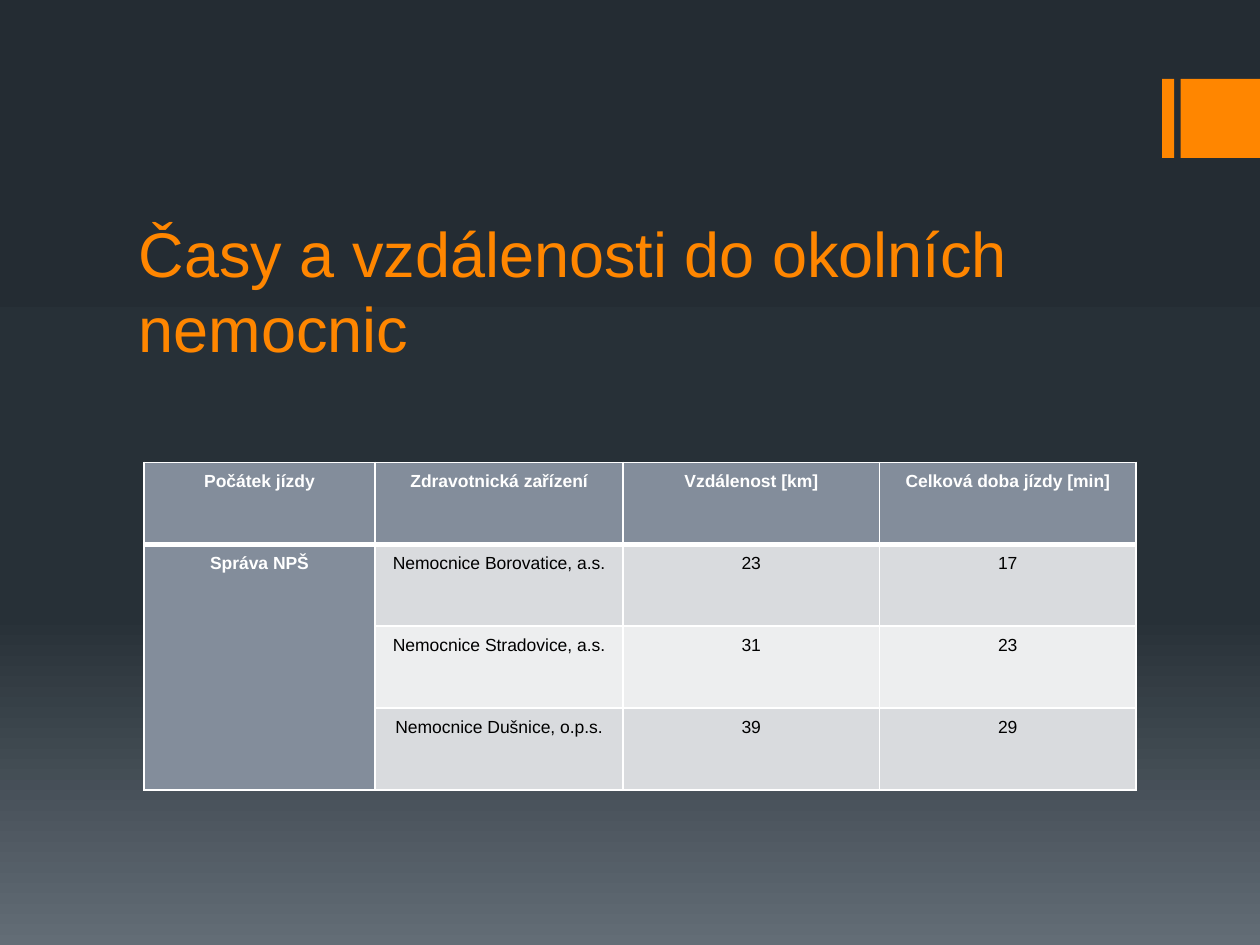
from copy import deepcopy
from dataclasses import dataclass

from lxml import etree
from pptx import Presentation
from pptx.dml.color import RGBColor
from pptx.enum.shapes import MSO_SHAPE
from pptx.enum.text import MSO_ANCHOR, MSO_AUTO_SIZE, PP_ALIGN
from pptx.oxml.ns import qn
from pptx.util import Pt

RECT = MSO_SHAPE.RECTANGLE
BOTTOM = MSO_ANCHOR.BOTTOM
FIXED = MSO_AUTO_SIZE.NONE
LEFT, CENTER = PP_ALIGN.LEFT, PP_ALIGN.CENTER


@dataclass(frozen=True)
class Theme:
    font: str = "Arial"
    title_size: float = 36
    cell_size: float = 10
    accent: str = "FF8600"
    head: str = "838D9B"
    bands: tuple = ("D9DBDE", "EDEEEF")
    light: str = "FFFFFF"
    dark: str = "000000"
    back: tuple = ((0, "242C33"), (0.65, "273037"), (1, "636D76"))


@dataclass(frozen=True)
class Box:
    left: float
    top: float
    width: float
    height: float

    def lengths(self) -> list:
        return [Pt(n) for n in (self.left, self.top, self.width, self.height)]


THEME = Theme()
MARKS = (Box(664.1, 45.1, 6.9, 45.1), Box(674.7, 45.1, 45.3, 45.1))
TITLE = Box(72, 121.7, 576, 90.7)
GRID = Box(82.2, 264.2, 567, 187.2)
COLS = (132.1, 141.7, 146.6, 146.6)
ROWS = (
    ("Počátek jízdy", "Zdravotnická zařízení", "Vzdálenost [km]",
     "Celková doba jízdy [min]"),
    ("Správa NPŠ", "Nemocnice Borovatice, a.s.", "23", "17"),
    ("", "Nemocnice Stradovice, a.s.", "31", "23"),
    ("", "Nemocnice Dušnice, o.p.s.", "39", "29"),
)


def color(code: str) -> RGBColor:
    return RGBColor.from_string(code)


def paint_back(slide) -> None:
    fill = slide.background.fill
    fill.gradient()
    fill.gradient_angle = 270
    stops = slide.element.find(".//" + qn("a:gsLst"))
    stops.insert(1, deepcopy(stops[0]))
    for stop, (place, code) in zip(fill.gradient_stops, THEME.back):
        stop.position = place
        stop.color.rgb = color(code)


def add_mark(slide, box: Box) -> None:
    mark = slide.shapes.add_shape(RECT, *box.lengths())
    mark.shadow.inherit = False
    mark.fill.solid()
    mark.fill.fore_color.rgb = color(THEME.accent)
    mark.line.fill.background()


def style(par, size: float, code: str, align, bold: bool = False) -> None:
    par.alignment = align
    font = par.font
    font.name, font.size, font.bold = THEME.font, Pt(size), bold
    font.color.rgb = color(code)


def set_title(slide, text: str) -> None:
    title = slide.shapes.title
    title.left, title.top, title.width, title.height = TITLE.lengths()
    frame = title.text_frame
    frame.text = text
    frame.word_wrap = True
    frame.auto_size = FIXED
    frame.vertical_anchor = BOTTOM
    style(frame.paragraphs[0], THEME.title_size, THEME.accent, LEFT)


def add_edges(cell, above: float, below: float) -> None:
    """Line the cell's sides; the schema wants the lines before the fill."""
    props = cell._tc.get_or_add_tcPr()
    edges = (("L", 1), ("R", 1), ("T", above), ("B", below))
    for spot, (side, width) in enumerate(edges):
        line = etree.Element(qn(f"a:ln{side}"), w=str(Pt(width)))
        fill = etree.SubElement(line, qn("a:solidFill"))
        etree.SubElement(fill, qn("a:srgbClr"), val=THEME.light)
        props.insert(spot, line)


def fill_cell(cell, text: str, row: int, col: int) -> None:
    head = row == 0 or col == 0
    cell.margin_left = cell.margin_right = Pt(5)
    cell.margin_top = cell.margin_bottom = 0
    cell.fill.solid()
    cell.fill.fore_color.rgb = color(
        THEME.head if head else THEME.bands[(row - 1) % 2])
    add_edges(cell, 3 if row == 1 else 1, 3 if row == 0 else 1)
    cell.text = text
    par = cell.text_frame.paragraphs[0]
    par.line_spacing = 1.5
    style(par, THEME.cell_size, THEME.light if head else THEME.dark,
          CENTER, head)


def add_grid(slide) -> None:
    table = slide.shapes.add_table(
        len(ROWS), len(COLS), *GRID.lengths()).table
    for col, width in zip(table.columns, COLS):
        col.width = Pt(width)
    for r, row in enumerate(ROWS):
        for c, text in enumerate(row):
            fill_cell(table.cell(r, c), text, r, c)
    table.cell(1, 0).merge(table.cell(len(ROWS) - 1, 0))


def main() -> None:
    deck = Presentation()
    deck.slide_width, deck.slide_height = Pt(720), Pt(540)
    slide = deck.slides.add_slide(deck.slide_layouts[5])
    paint_back(slide)
    for box in MARKS:
        add_mark(slide, box)
    set_title(slide, "Časy a vzdálenosti do okolních nemocnic")
    add_grid(slide)
    deck.save("out.pptx")


if __name__ == "__main__":
    main()
